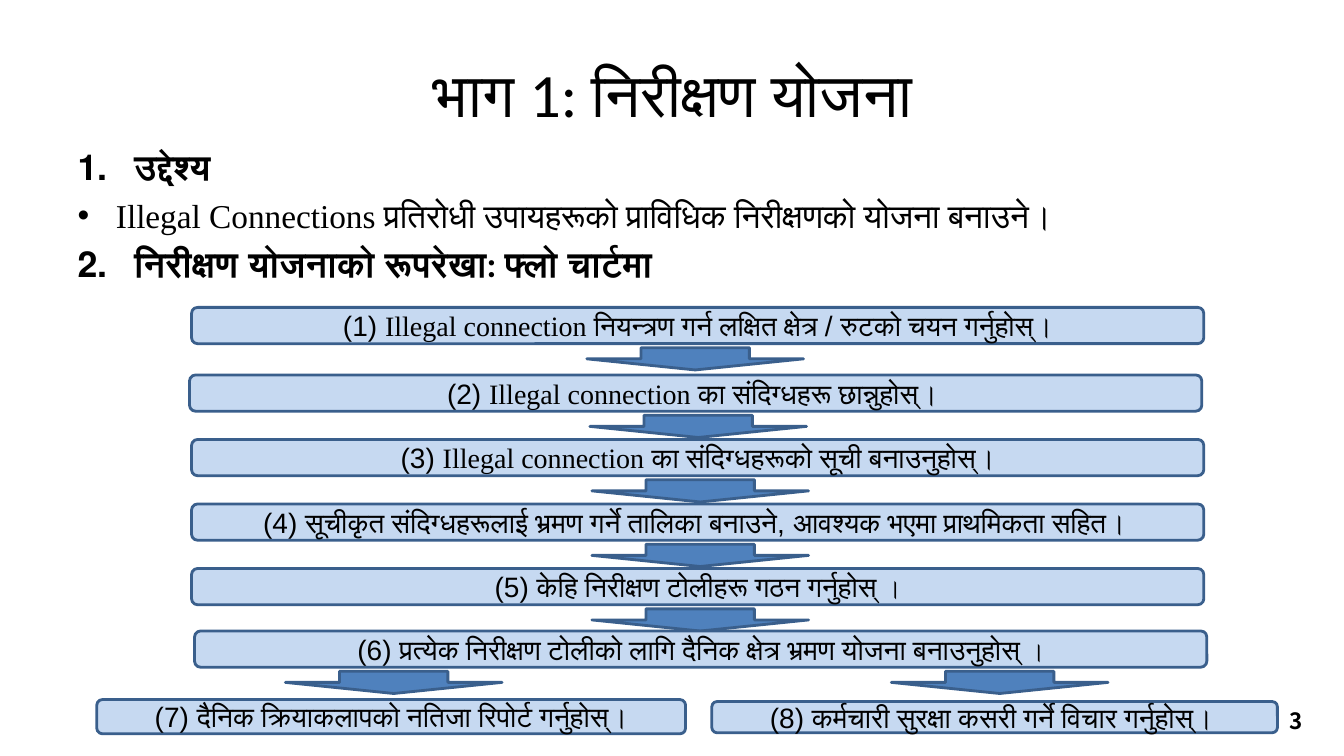
from pptx import Presentation
from pptx.dml.color import RGBColor as RGB
from pptx.enum.shapes import MSO_SHAPE as SHAPE
from pptx.enum.text import MSO_ANCHOR as ANCHOR, MSO_AUTO_SIZE as FIT, PP_ALIGN as ALIGN
from pptx.oxml.ns import qn
from pptx.util import Inches, Pt
from lxml.etree import SubElement

COLORS = {"text": "000000", "box": "C6D9F1", "arrow": "4F81BD", "line": "3A5F8C"}
ARIAL, TIMES, CALIBRI = "Arial", "Times New Roman", "Calibri"

TITLE = "भाग 1: निरीक्षण योजना"
HEAD = {"size": 25.5, "name": CALIBRI, "bold": True}
ITEM = {"size": 23.8, "name": CALIBRI, "bold": False}
NUMBER = {"size": 16, "name": "Noto Sans CJK JP", "bold": True}
STEP = {"size": 20, "name": ARIAL}
STEP_EN = {"size": 20, "name": TIMES}
STEP_END = {"size": 18, "name": ARIAL}

OUTLINE = [
    (1, [("उद्देश्य", HEAD)]),
    (None, [("Illegal Connections ", {**ITEM, "name": TIMES}),
            ("प्रतिरोधी उपायहरूको प्राविधिक निरीक्षणको योजना बनाउने।", ITEM)]),
    (2, [("निरीक्षण योजनाको रूपरेखा: फ्लो चार्टमा", HEAD)]),
]

ENGLISH = ("Illegal connection ", STEP_EN)
STOP = ("।", STEP_END)
STEPS = [
    (1.9, 3.05, 5.82, [("(1) ", STEP), ENGLISH,
                       ("नियन्त्रण गर्न लक्षित क्षेत्र / रुटको चयन गर्नुहोस्।", STEP)]),
    (1.88, 3.72, 5.85, [("(2) ", STEP), ENGLISH, ("का संदिग्धहरू छान्नुहोस्। ", STEP)]),
    (1.9, 4.36, 5.87, [("(3) ", STEP), ENGLISH, ("का संदिग्धहरूको सूची बनाउनुहोस्।", STEP)]),
    (1.9, 5, 5.87, [("(4) सूचीकृत संदिग्धहरूलाई भ्रमण गर्ने तालिका बनाउने, "
                     "आवश्यक भएमा प्राथमिकता सहित। ", STEP)]),
    (1.9, 5.64, 5.87, [("(5) केहि निरीक्षण टोलीहरू गठन गर्नुहोस् ", STEP), STOP]),
    (1.93, 6.26, None, [("(6) प्रत्येक निरीक्षण टोलीको लागि दैनिक क्षेत्र भ्रमण योजना "
                         "बनाउनुहोस् ", STEP), STOP]),
]
BRANCHES = [
    ((0.96, 6.94, 5.84, 0.34), 2.83, 0.1,
     [("(7) दैनिक क्रियाकलापको नतिजा रिपोर्ट गर्नुहोस्।", STEP)]),
    ((7.06, 6.96, 5.61, 0.31), 8.84, 0,
     [("(8) कर्मचारी सुरक्षा कसरी गर्ने विचार गर्नुहोस्। ", STEP)]),
]
STEP_W, STEP_H = 10.04, 0.36
ARROW_W, ARROW_H, ARROW_DROP = 2.15, 0.22, 0.4


def place(sp, box):
    for key, value in zip(("left", "top", "width", "height"), box):
        setattr(sp, key, Inches(value))


def write(p, runs, align=None):
    p.alignment = align
    for text, style in runs:
        r = p.add_run()
        r.text = text
        r.font.color.rgb = RGB.from_string(COLORS["text"])
        for key, value in style.items():
            setattr(r.font, key, Pt(value) if key == "size" else value)


def add_bullet(p, start):
    indent = Inches(0.56 if start else 0.38)
    pPr = p._p.get_or_add_pPr()
    pPr.set("marL", str(indent))
    pPr.set("indent", str(-indent))
    if start:
        num = SubElement(pPr, qn("a:buAutoNum"), type="arabicPeriod")
        if start > 1:
            num.set("startAt", str(start))
    else:
        SubElement(pPr, qn("a:buChar"), char="•")


def add_block(shapes, kind, box, fill):
    sp = shapes.add_shape(kind, *map(Inches, box))
    sp.shadow.inherit = False
    sp.fill.solid()
    sp.fill.fore_color.rgb = RGB.from_string(COLORS[fill])
    sp.line.color.rgb = RGB.from_string(COLORS["line"])
    sp.line.width = Pt(2)
    return sp


def add_step(shapes, box, runs, margin=0.1):
    tf = add_block(shapes, SHAPE.FLOWCHART_ALTERNATE_PROCESS, box, "box").text_frame
    tf.word_wrap = True
    tf.vertical_anchor = ANCHOR.MIDDLE
    tf.margin_left = tf.margin_right = Inches(margin)
    write(tf.paragraphs[0], runs, ALIGN.CENTER)


def add_arrow(shapes, left, step_top):
    box = (left, step_top + ARROW_DROP, ARROW_W, ARROW_H)
    add_block(shapes, SHAPE.DOWN_ARROW, box, "arrow")


def main():
    prs = Presentation()
    prs.slide_width, prs.slide_height = Inches(13.33), Inches(7.5)
    s = prs.slides.add_slide(prs.slide_layouts[1])

    title, body = s.placeholders
    place(title, (0.67, 0.3, 12, 1.25))
    title.text_frame.vertical_anchor = ANCHOR.MIDDLE
    write(title.text_frame.paragraphs[0], [(TITLE, {"size": 44, "name": CALIBRI})], ALIGN.CENTER)

    place(body, (0.67, 1.39, 12, 1.58))
    tf = body.text_frame
    tf.auto_size = FIT.NONE
    for i, (start, runs) in enumerate(OUTLINE):
        p = tf.add_paragraph() if i else tf.paragraphs[0]
        write(p, runs)
        add_bullet(p, start)

    tf = s.shapes.add_textbox(*map(Inches, (9.91, 6.95, 3.11, 0.4))).text_frame
    tf.word_wrap = True
    tf.vertical_anchor = ANCHOR.MIDDLE
    write(tf.paragraphs[0], [("3", NUMBER)], ALIGN.RIGHT)

    flow = s.shapes.add_group_shape().shapes
    for box, arrow_left, margin, runs in BRANCHES:
        add_step(flow, box, runs, margin)
        add_arrow(flow, arrow_left, STEPS[-1][1])
    for left, top, arrow_left, runs in STEPS:
        add_step(flow, (left, top, STEP_W, STEP_H), runs)
        if arrow_left:
            add_arrow(flow, arrow_left, top)

    prs.save("out.pptx")


if __name__ == "__main__":
    main()
